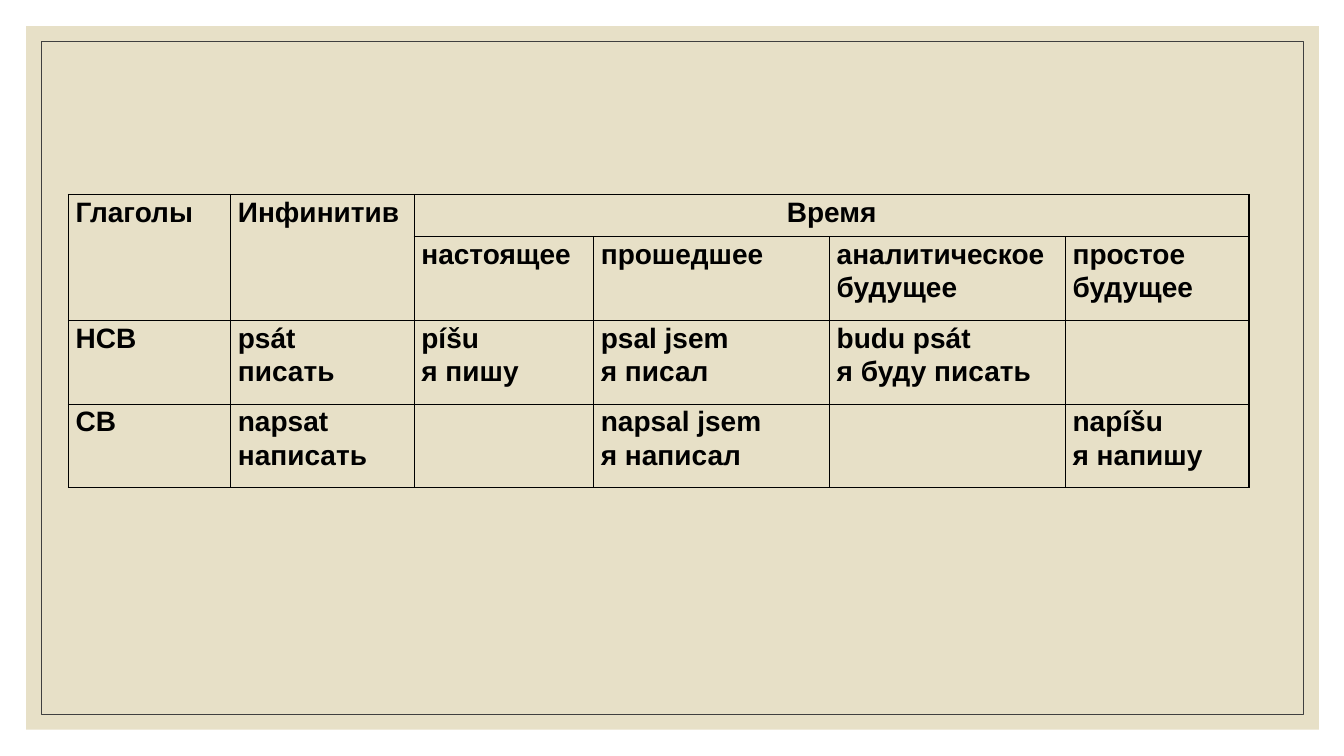
import dataclasses

import pptx
import pptx.dml.color
import pptx.enum.shapes
import pptx.enum.text
import pptx.oxml
import pptx.oxml.ns
import pptx.util

Inches = pptx.util.Inches
Pt = pptx.util.Pt
ALIGN = pptx.enum.text.PP_ALIGN


@dataclasses.dataclass(frozen=True)
class Theme:
    """Colours, font and type size of the slide."""
    panel: str = "E7E0C7"
    frame: str = "404040"
    ink: str = "000000"
    font: str = "Arial"
    size: int = 20


THEME = Theme()
COLUMNS = (1.61, 1.82, 1.78, 2.34, 2.34, 1.82)
ROWS = (0.42, 0.83, 0.83, 0.83)
VERBS = (
    ("Глаголы", "Инфинитив", "Время", "", "", ""),
    ("", "", "настоящее", "прошедшее", "аналитическое будущее", "простое будущее"),
    ("НСВ", "psát\nписать", "píšu\nя пишу", "psal jsem\nя писал",
     "budu psát\nя буду писать", ""),
    ("СВ", "napsat\nнаписать", "", "napsal jsem\nя написал", "", "napíšu\nя напишу"),
)
MERGES = (((0, 0), (1, 0)), ((0, 1), (1, 1)), ((0, 2), (0, 5)))


def rgb(value):
    """Return the colour object for a hex string."""
    return pptx.dml.color.RGBColor.from_string(value)


def write_text(tf, text, align=ALIGN.JUSTIFY, size=THEME.size, color=THEME.ink,
               bold=True, spacing=1.07):
    """Write each line of the text as one formatted paragraph."""
    for i, line in enumerate(text.split("\n")):
        p = tf.add_paragraph() if i else tf.paragraphs[0]
        p.alignment = align
        p.line_spacing = spacing
        r = p.add_run()
        r.text = line
        r.font.name = THEME.font
        r.font.size = Pt(size)
        r.font.bold = bold
        r.font.color.rgb = rgb(color)


def set_borders(cell, color=THEME.ink, width=1):
    """Draw a solid line on all four sides of a cell."""
    tc_pr = cell._tc.get_or_add_tcPr()
    for i, side in enumerate(("lnL", "lnR", "lnT", "lnB")):
        tc_pr.insert(i, pptx.oxml.parse_xml(
            f'<a:{side} {pptx.oxml.ns.nsdecls("a")} w="{Pt(width)}">'
            f'<a:solidFill><a:srgbClr val="{color}"/></a:solidFill></a:{side}>'))


def add_rectangle(s, box, fill=None, line=None):
    """Add a flat rectangle with an optional fill and thin outline."""
    sp = s.shapes.add_shape(pptx.enum.shapes.MSO_SHAPE.RECTANGLE,
                            *map(Inches, box))
    sp.shadow.inherit = False
    if fill:
        sp.fill.solid()
        sp.fill.fore_color.rgb = rgb(fill)
    else:
        sp.fill.background()
    if line:
        sp.line.color.rgb = rgb(line)
        sp.line.width = Pt(0.5)
    else:
        sp.line.fill.background()


def add_backdrop(s, box, inset=0.15):
    """Add the tinted panel and the thin frame inside it."""
    left, top, width, height = box
    add_rectangle(s, box, fill=THEME.panel)
    add_rectangle(s, (left + inset, top + inset, width - 2 * inset,
                      height - 2 * inset), line=THEME.frame)


def add_verb_table(s, left, top):
    """Add the table of verb aspects and tenses at the given corner."""
    table = s.shapes.add_table(len(ROWS), len(COLUMNS), Inches(left), Inches(top),
                               Inches(sum(COLUMNS)), Inches(sum(ROWS))).table
    table.first_row = table.horz_banding = False
    for column, width in zip(table.columns, COLUMNS):
        column.width = Inches(width)
    for row, height, texts in zip(table.rows, ROWS, VERBS):
        row.height = Inches(height)
        for cell, text in zip(row.cells, texts):
            cell.margin_left = cell.margin_right = Inches(0.07)
            cell.margin_top = cell.margin_bottom = 0
            cell.fill.background()
            set_borders(cell)
            if text:
                align = ALIGN.CENTER if text == "Время" else ALIGN.JUSTIFY
                write_text(cell.text_frame, text, align=align)
    for first, last in MERGES:
        table.cell(*first).merge(table.cell(*last))


def main():
    """Build the slide and save it."""
    prs = pptx.Presentation()
    prs.slide_width, prs.slide_height = Inches(13.33), Inches(7.5)
    s = prs.slides.add_slide(prs.slide_layouts[6])
    add_backdrop(s, (0.26, 0.26, 12.82, 6.98))
    add_verb_table(s, 0.68, 1.93)
    prs.save("out.pptx")


if __name__ == "__main__":
    main()
